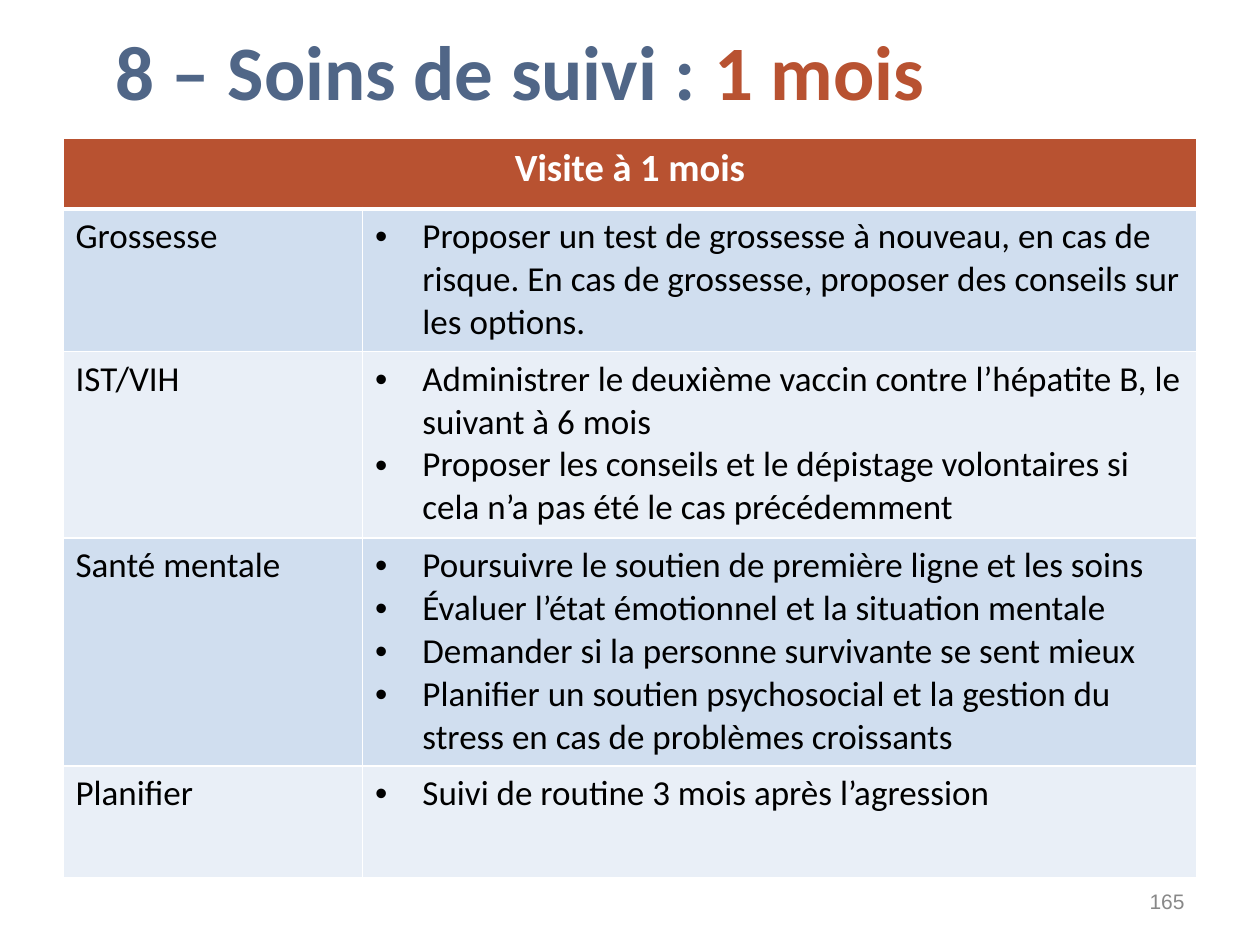
from lxml.etree import SubElement
from pptx import Presentation
from pptx.dml.color import RGBColor
from pptx.enum.text import MSO_ANCHOR, PP_ALIGN
from pptx.oxml import parse_xml
from pptx.oxml.ns import nsdecls, qn
from pptx.util import Pt

BLUE, RUST, WHITE, BLACK, GREY = "506687", "B85231", "FFFFFF", "000000", "888888"
BANDS = ["D0DEEF", "E9EFF7"]
TITLE = [("8 – Soins de suivi : ", BLUE), ("1 mois", RUST)]
PAGE_NUMBER = "165"
HEADER = "Visite à 1 mois"
VISIT = [
    ("Grossesse", [
        "Proposer un test de grossesse à nouveau, en cas de risque. "
        "En cas de grossesse, proposer des conseils sur les options."]),
    ("IST/VIH", [
        "Administrer le deuxième vaccin contre l’hépatite B, le suivant à 6 mois",
        "Proposer les conseils et le dépistage volontaires si cela n’a pas été "
        "le cas précédemment"]),
    ("Santé mentale", [
        "Poursuivre le soutien de première ligne et les soins",
        "Évaluer l’état émotionnel et la situation mentale",
        "Demander si la personne survivante se sent mieux",
        "Planifier un soutien psychosocial et la gestion du stress en cas de "
        "problèmes croissants"]),
    ("Planifier", ["Suivi de routine 3 mois après l’agression"]),
]
COLUMN_WIDTHS = [171.2, 476.8]
ROW_HEIGHTS = [40.3, 81.4, 106.6, 130.3, 64.1]


def rgb(value):
    return RGBColor.from_string(value)


def add_text(paragraph, text, size=20, font="Calibri", color=BLACK, bold=False,
             align=PP_ALIGN.LEFT):
    paragraph.alignment = align
    run = paragraph.add_run()
    run.text = text
    run.font.size = Pt(size)
    run.font.name = font
    run.font.bold = bold
    run.font.color.rgb = rgb(color)


def add_bullet(paragraph):
    properties = paragraph._p.get_or_add_pPr()
    properties.set("marL", str(Pt(27)))
    properties.set("indent", str(-Pt(27)))
    bullet_color = SubElement(properties, qn("a:buClr"))
    SubElement(bullet_color, qn("a:srgbClr"), val=BLACK)
    SubElement(properties, qn("a:buFont"), typeface="Arial")
    SubElement(properties, qn("a:buChar"), char="•")


def style_cell(cell, fill, top=1, bottom=1):
    cell.fill.solid()
    cell.fill.fore_color.rgb = rgb(fill)
    properties = cell._tc.get_or_add_tcPr()
    borders = [("L", 1), ("R", 1), ("T", top), ("B", bottom)]
    for index, (side, width) in enumerate(borders):
        properties.insert(index, parse_xml(
            f'<a:ln{side} {nsdecls("a")} w="{Pt(width)}"><a:solidFill>'
            f'<a:srgbClr val="{WHITE}"/></a:solidFill></a:ln{side}>'))


def add_text_box(slide, left, top, width, height):
    frame = slide.shapes.add_textbox(Pt(left), Pt(top), Pt(width), Pt(height)).text_frame
    frame.word_wrap = True
    frame.vertical_anchor = MSO_ANCHOR.MIDDLE
    return frame.paragraphs[0]


def add_visit_table(slide):
    table = slide.shapes.add_table(
        len(ROW_HEIGHTS), len(COLUMN_WIDTHS), Pt(36), Pt(79.2),
        Pt(sum(COLUMN_WIDTHS)), Pt(sum(ROW_HEIGHTS))).table
    for column, width in zip(table.columns, COLUMN_WIDTHS):
        column.width = Pt(width)
    for row, height in zip(table.rows, ROW_HEIGHTS):
        row.height = Pt(height)

    for cell in table.rows[0].cells:
        style_cell(cell, RUST, bottom=3)
    header = table.cell(0, 0)
    header.merge(table.cell(0, 1))
    add_text(header.text_frame.paragraphs[0], HEADER, size=22, color=WHITE,
             bold=True, align=PP_ALIGN.CENTER)

    for index, (topic, actions) in enumerate(VISIT):
        topic_cell, action_cell = table.rows[index + 1].cells
        for cell in (topic_cell, action_cell):
            style_cell(cell, BANDS[index % 2], top=3 if index == 0 else 1)
        add_text(topic_cell.text_frame.paragraphs[0], topic)
        frame = action_cell.text_frame
        for number, action in enumerate(actions):
            paragraph = frame.add_paragraph() if number else frame.paragraphs[0]
            add_bullet(paragraph)
            add_text(paragraph, action)


def main():
    presentation = Presentation()
    presentation.slide_width, presentation.slide_height = Pt(720), Pt(540)
    slide = presentation.slides.add_slide(presentation.slide_layouts[6])

    add_visit_table(slide)
    add_text(add_text_box(slide, 516.2, 500.4, 167.8, 28.8), PAGE_NUMBER, size=12,
             font="Arial", color=GREY, align=PP_ALIGN.RIGHT)
    title = add_text_box(slide, 59, 10, 515, 66.2)
    title.line_spacing = 0.9
    for text, color in TITLE:
        add_text(title, text, size=44, color=color, bold=True)

    presentation.save("out.pptx")


if __name__ == "__main__":
    main()
